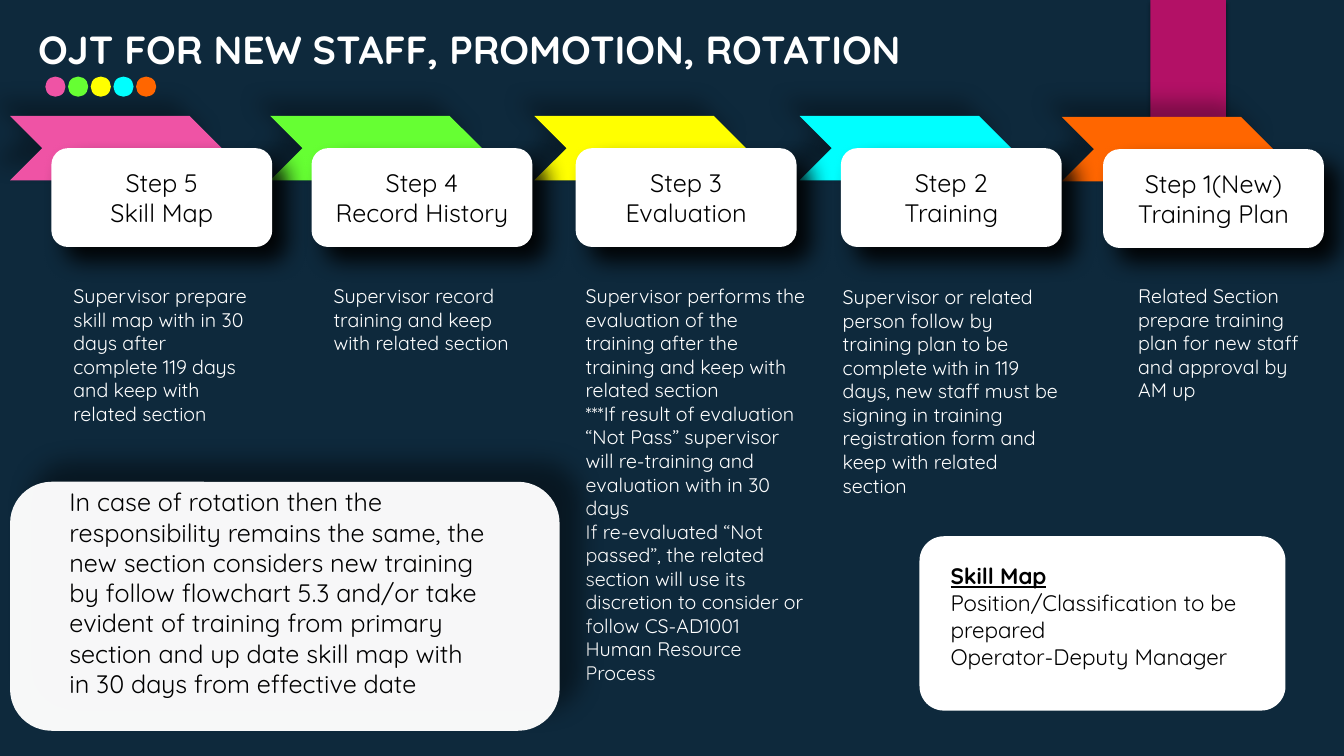
from dataclasses import dataclass

import pptx
import pptx.dml.color
import pptx.enum.shapes
import pptx.enum.text
import pptx.oxml
import pptx.oxml.ns
import pptx.util
from lxml import etree

Inches = pptx.util.Inches
Shape = pptx.enum.shapes.MSO_SHAPE
Align = pptx.enum.text.PP_ALIGN
Anchor = pptx.enum.text.MSO_ANCHOR
qn = pptx.oxml.ns.qn


@dataclass(frozen=True)
class Theme:
    font: str = "Quicksand"
    navy: str = "0E293C"
    ribbon: str = "B31166"
    white: str = "FFFFFF"
    black: str = "000000"
    pink: str = "EF53A5"
    green: str = "66FF33"
    yellow: str = "FFFF00"
    cyan: str = "00FFFF"
    orange: str = "FF6600"
    title: int = 28
    heading: int = 18
    legend: int = 16
    body: int = 14


THEME = Theme()

RIBBON_SHADOW = (45, 3, 2, 90)
CHEVRON_SHADOW = (31, 15, 16, 225)
CARD_SHADOW = (92, 16, 14, 45)
NOTE_SHADOW = (43, 17, 21, 315)

STEPS = [
    ("Step 1(New)", "Training Plan", THEME.orange, 10.53, 1.16),
    ("Step 2", "Training", THEME.cyan, 7.93, 1.15),
    ("Step 3", "Evaluation", THEME.yellow, 5.3, 1.15),
    ("Step 4", "Record History", THEME.green, 2.68, 1.15),
    ("Step 5", "Skill Map", THEME.pink, 0.1, 1.15),
]

DESCRIPTIONS = [
    (11.19, 2.77, 1.94, 1.28, [
        "Related Section prepare training plan for new staff and approval by AM up",
    ]),
    (8.26, 2.78, 2.35, 2.22, [
        "Supervisor or related person follow by training plan to be complete with in 119 days, "
        "new staff must be signing in training registration form and keep with related section",
    ]),
    (5.71, 2.77, 2.38, 4.34, [
        "Supervisor performs the evaluation of the training after the training and keep with "
        "related section",
        "***If result of evaluation “Not Pass” supervisor will re-training and evaluation with "
        "in 30 days",
        "If re-evaluated “Not passed”, the related section will use its discretion to consider "
        "or follow CS-AD1001 Human Resource Process",
    ]),
    (3.21, 2.77, 1.94, 1.04, [
        "Supervisor record training and keep with related section",
    ]),
    (0.63, 2.77, 1.94, 1.75, [
        "Supervisor prepare skill map with in 30 days after complete 119 days and keep with "
        "related section",
    ]),
]

ROTATION_NOTE = (
    "In case of rotation then the responsibility remains the same, the new section considers "
    "new training by follow flowchart 5.3 and/or take evident of training from primary section "
    "and up date skill map with in 30 days from effective date"
)


def rgb(color):
    return pptx.dml.color.RGBColor.from_string(color)


def cast_shadow(shape, alpha, blur, distance, angle):
    effects = shape._element.spPr.find(qn("a:effectLst"))
    shadow = etree.SubElement(
        effects, qn("a:outerShdw"),
        blurRad=str(pptx.util.Pt(blur)), dist=str(pptx.util.Pt(distance)),
        dir=str(angle * 60000), algn="ctr", rotWithShape="0")
    tint = etree.SubElement(shadow, qn("a:srgbClr"), val=THEME.black)
    etree.SubElement(tint, qn("a:alpha"), val=str(alpha * 1000))


def add_block(shapes, kind, left, top, width, height, fill,
              shadow=None, opacity=None, corner=None):
    block = shapes.add_shape(kind, Inches(left), Inches(top), Inches(width), Inches(height))
    block.fill.solid()
    block.fill.fore_color.rgb = rgb(fill)
    block.line.fill.background()
    block.shadow.inherit = False
    if shadow:
        cast_shadow(block, *shadow)
    if opacity is not None:
        tint = block._element.spPr.find(qn("a:solidFill"))[0]
        etree.SubElement(tint, qn("a:alpha"), val=str(opacity * 1000))
    if corner is not None:
        block.adjustments[0] = corner
    return block


def write(frame, lines, size, color, align=Align.LEFT, anchor=Anchor.TOP,
          bold=False, heading_first=False):
    frame.word_wrap = True
    frame.vertical_anchor = anchor
    for index, line in enumerate(lines):
        paragraph = frame.paragraphs[0] if index == 0 else frame.add_paragraph()
        paragraph.alignment = align
        run = paragraph.add_run()
        run.text = line
        is_heading = heading_first and index == 0
        run.font.name = THEME.font
        run.font.size = pptx.util.Pt(size)
        run.font.color.rgb = rgb(color)
        run.font.bold = bold or is_heading
        run.font.underline = is_heading


def add_text(shapes, left, top, width, height, lines, size, color, **style):
    box = shapes.add_textbox(Inches(left), Inches(top), Inches(width), Inches(height))
    write(box.text_frame, lines, size, color, **style)


def add_step(slide, number, name, color, left, top):
    step = slide.shapes.add_group_shape().shapes
    add_block(step, Shape.CHEVRON, left, top, 2.1, 0.64, color, shadow=CHEVRON_SHADOW)
    card = add_block(step, Shape.ROUNDED_RECTANGLE, left + 0.41, top + 0.32, 2.19, 0.98,
                     THEME.white, shadow=CARD_SHADOW)
    write(card.text_frame, [number, name], THEME.heading, THEME.black,
          align=Align.CENTER, anchor=Anchor.MIDDLE)


def add_rotation_note(slide):
    note = slide.shapes.add_group_shape().shapes
    add_block(note, Shape.ROUNDED_RECTANGLE, 0.1, 4.78, 5.45, 2.47, THEME.white,
              shadow=NOTE_SHADOW, opacity=97)
    add_text(note, 0.59, 4.78, 4.34, 2.52, [ROTATION_NOTE], THEME.heading, THEME.black)


def add_skill_map_legend(slide):
    legend = slide.shapes.add_group_shape().shapes
    add_block(legend, Shape.ROUNDED_RECTANGLE, 9.12, 5.32, 3.63, 1.73, THEME.white, corner=0.14)
    add_text(legend, 9.33, 5.53, 3.31, 1.18,
             ["Skill Map", "Position/Classification to be prepared", "Operator-Deputy Manager"],
             THEME.legend, THEME.black, heading_first=True)


def main():
    deck = pptx.Presentation()
    deck.slide_width = Inches(13.33)
    deck.slide_height = Inches(7.5)
    slide = deck.slides.add_slide(deck.slide_layouts[6])
    slide.background.fill.solid()
    slide.background.fill.fore_color.rgb = rgb(THEME.navy)

    add_block(slide.shapes, Shape.RECTANGLE, 11.41, 0, 0.75, 1.25, THEME.ribbon,
              shadow=RIBBON_SHADOW)
    for step in STEPS:
        add_step(slide, *step)
    for left, top, width, height, lines in DESCRIPTIONS:
        add_text(slide.shapes, left, top, width, height, lines, THEME.body, THEME.white)

    add_text(slide.shapes, 0.28, 0.2, 9.05, 0.57, ["OJT FOR NEW STAFF, PROMOTION, ROTATION"],
             THEME.title, THEME.white, bold=True)
    dot_colors = [THEME.pink, THEME.green, THEME.yellow, THEME.cyan, THEME.orange]
    for index, color in enumerate(dot_colors):
        add_block(slide.shapes, Shape.OVAL, 0.45 + index * 0.225, 0.76, 0.2, 0.2, color)

    add_rotation_note(slide)
    add_skill_map_legend(slide)
    deck.save("out.pptx")


if __name__ == "__main__":
    main()
